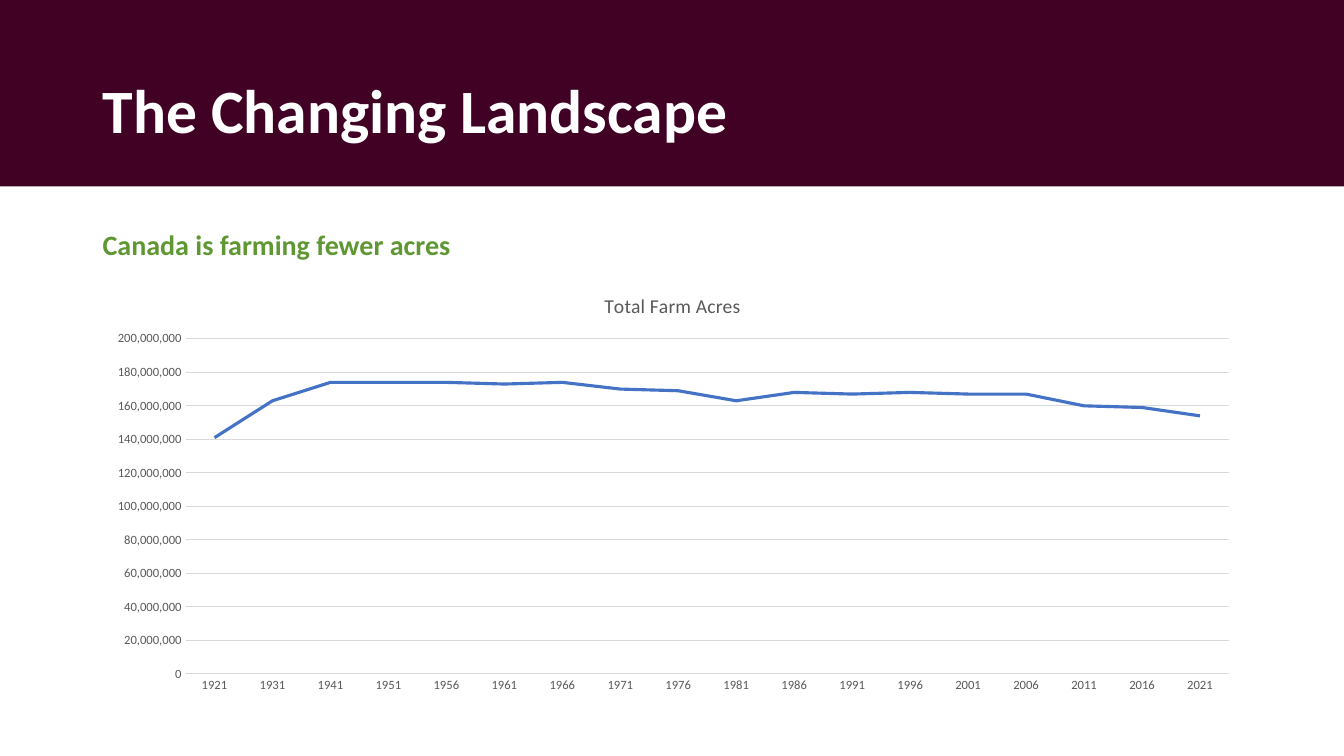
from pptx import Presentation
from pptx.chart.data import CategoryChartData
from pptx.dml.color import RGBColor
from pptx.enum.chart import XL_CHART_TYPE as ChartType, XL_TICK_MARK as TickMark
from pptx.enum.shapes import MSO_SHAPE as Preset
from pptx.enum.text import MSO_ANCHOR as Anchor
from pptx.oxml import parse_xml
from pptx.oxml.ns import nsdecls, qn
from pptx.util import Inches, Pt

FONT = "Calibri"
GREY = "595959"
RULE = "D9D9D9"


def paint(target, color):
    target.solid()
    target.fore_color.rgb = RGBColor.from_string(color)


def add_heading(slide, box, text, size, color, anchor):
    shape = slide.shapes.add_textbox(*map(Inches, box))
    frame = shape.text_frame
    frame.word_wrap = True
    frame.vertical_anchor = anchor
    paragraph = frame.paragraphs[0]
    paragraph.line_spacing = 0.9
    run = paragraph.add_run()
    run.text = text
    run.font.name = FONT
    run.font.size = Pt(size)
    run.font.bold = True
    paint(run.font.fill, color)


presentation = Presentation()
presentation.slide_width = Inches(13.33)
presentation.slide_height = Inches(7.5)
slide = presentation.slides.add_slide(presentation.slide_layouts[6])

left, width = 0.92, 11.5
band_height = 1.85

band = slide.shapes.add_shape(
    Preset.RECTANGLE, 0, 0, presentation.slide_width, Inches(band_height))
band.shadow.inherit = False
paint(band.fill, "400124")
band.line.fill.background()

add_heading(slide, (left, 0.4, width, band_height - 0.4),
            "The Changing Landscape", 44, "FFFFFF", Anchor.MIDDLE)
add_heading(slide, (left, 2.25, 5.97, 0.48),
            "Canada is farming fewer acres", 20, "5F9732", Anchor.TOP)

years = [1921, 1931, 1941, *range(1951, 2022, 5)]
million_acres = [141, 163, 174, 174, 174, 173, 174, 170, 169,
                 163, 168, 167, 168, 167, 167, 160, 159, 154]
data = CategoryChartData(number_format="#,##0")
data.categories = [str(year) for year in years]
data.add_series("Series 1", [acres * 1_000_000 for acres in million_acres])

chart = slide.shapes.add_chart(
    ChartType.LINE, *map(Inches, (left, 2.73, width, 4.21)), data).chart
chart.has_legend = False
chart.font.name = FONT
chart.font.size = Pt(10)

chart.has_title = True
title_run = chart.chart_title.text_frame.paragraphs[0].add_run()
title_run.text = "Total Farm Acres"
title_run.font.name = FONT
title_run.font.size = Pt(14)
title_run.font.bold = False
paint(title_run.font.fill, GREY)
chart.chart_title.include_in_layout = False

for axis in (chart.category_axis, chart.value_axis):
    axis.major_tick_mark = TickMark.NONE
    axis.minor_tick_mark = TickMark.NONE
    axis.tick_labels.font.name = FONT
    axis.tick_labels.font.size = Pt(9)
    paint(axis.tick_labels.font.fill, GREY)

value_axis = chart.value_axis
value_axis.minimum_scale = 0
value_axis.maximum_scale = 200_000_000
value_axis.major_unit = 20_000_000
value_axis.tick_labels.number_format = "#,##0"
value_axis.tick_labels.number_format_is_linked = False
value_axis.format.line.fill.background()
for line in (chart.category_axis.format.line, value_axis.major_gridlines.format.line):
    line.width = Pt(0.75)
    paint(line.fill, RULE)

plot = chart.plots[0]
plot.vary_by_categories = False
acres_series = plot.series[0]
acres_series.smooth = False
acres_series.format.line.width = Pt(2.25)
paint(acres_series.format.line.fill, "4472C4")

plot_area = chart.element.find(".//" + qn("c:plotArea"))
for layout in plot_area.findall(qn("c:layout")):
    plot_area.remove(layout)
shares = {"x": 0.08, "y": 0.15, "w": 0.9, "h": 0.79}
plot_area.insert(0, parse_xml(
    f'<c:layout {nsdecls("c")}><c:manualLayout><c:layoutTarget val="inner"/>'
    '<c:xMode val="edge"/><c:yMode val="edge"/>'
    + "".join(f'<c:{side} val="{share}"/>' for side, share in shares.items())
    + "</c:manualLayout></c:layout>"))

presentation.save("out.pptx")
